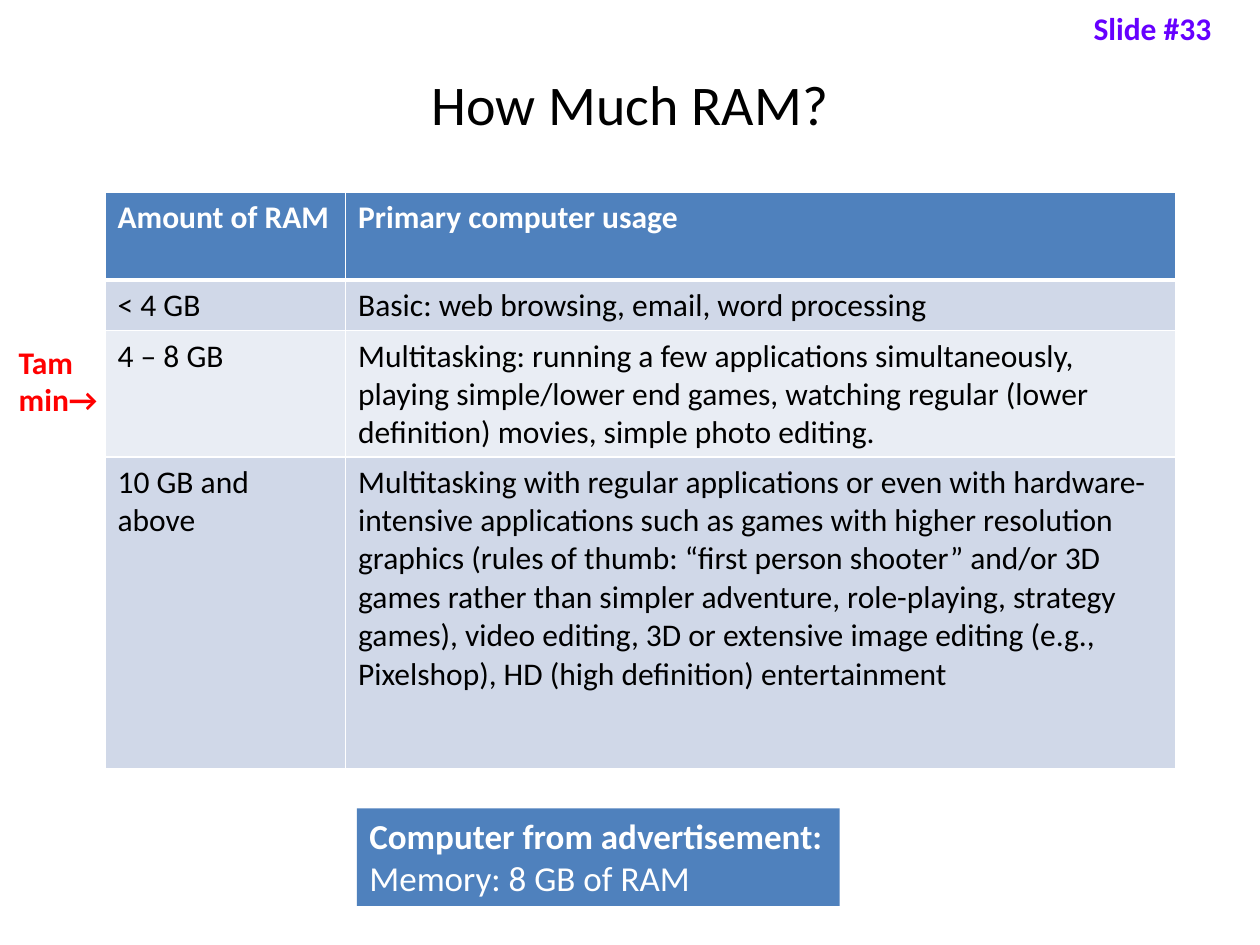
"""Build the slide on how much RAM a computer needs."""
from lxml import etree
from pptx import Presentation
from pptx.dml.color import RGBColor
from pptx.enum.shapes import MSO_SHAPE
from pptx.enum.text import MSO_ANCHOR, PP_ALIGN
from pptx.oxml.ns import qn
from pptx.util import Pt

RECT = MSO_SHAPE.RECTANGLE
MIDDLE = MSO_ANCHOR.MIDDLE
TOP = MSO_ANCHOR.TOP
LEFT = PP_ALIGN.LEFT
CENTER = PP_ALIGN.CENTER
BLUE, PALE, PALER = "4F81BD", "D0D8E8", "E9EDF4"
WHITE, BLACK = "FFFFFF", "000000"


def rgb(value):
    return RGBColor.from_string(value)


def write(tf, text, size, color, bold=False, align=LEFT):
    tf.text = text
    for p in tf.paragraphs:
        p.alignment = align
        for r in p.runs:
            r.font.name = "Calibri"
            r.font.size = Pt(size)
            r.font.bold = bold
            r.font.color.rgb = rgb(color)


prs = Presentation()
prs.slide_width, prs.slide_height = Pt(720), Pt(540)
s = prs.slides.add_slide(prs.slide_layouts[6])

labels = [
    ("Slide #33", (617.8, 1.5, 102.2, 29), 18, "6600FF", True, LEFT, TOP),
    ("How Much RAM?", (36, 21.6, 648, 74.2), 32, BLACK, False, CENTER, MIDDLE),
    ("Tam\nmin→", (3.6, 192.2, 102.2, 51), 18, "FF0000", True, LEFT, TOP),
]
for text, box, size, color, bold, align, anchor in labels:
    tf = s.shapes.add_textbox(*map(Pt, box)).text_frame
    tf.word_wrap = True
    tf.vertical_anchor = anchor
    write(tf, text, size, color, bold, align)

rows = [
    ("Amount of RAM", "Primary computer usage"),
    ("< 4 GB", "Basic: web browsing, email, word processing"),
    ("4 – 8 GB",
     "Multitasking: running a few applications simultaneously, playing "
     "simple/lower end games, watching regular (lower definition) movies, "
     "simple photo editing."),
    ("10 GB and above",
     "Multitasking with regular applications or even with hardware-intensive "
     "applications such as games with higher resolution graphics (rules of "
     "thumb: “first person shooter” and/or 3D games rather than simpler "
     "adventure, role-playing, strategy games), video editing, 3D or extensive "
     "image editing (e.g., Pixelshop), HD (high definition) entertainment"),
]
fills = [BLUE, PALE, PALER, PALE]
widths = [137.5, 474.5]
heights = [50, 29, 71.5, 178]
table = s.shapes.add_table(len(rows), len(widths), Pt(60), Pt(110),
                           Pt(sum(widths)), Pt(sum(heights))).table
for column, width in zip(table.columns, widths):
    column.width = Pt(width)
for i, (row, height) in enumerate(zip(table.rows, heights)):
    row.height = Pt(height)
    header = i == 0
    edges = {"a:lnL": 1, "a:lnR": 1, "a:lnT": 3 if i == 1 else 1,
             "a:lnB": 3 if header else 1}
    for cell, text in zip(row.cells, rows[i]):
        write(cell.text_frame, text, 18, WHITE if header else BLACK, header)
        tc_pr = cell._tc.get_or_add_tcPr()
        for tag, weight in edges.items():
            ln = etree.SubElement(tc_pr, qn(tag), w=str(Pt(weight)))
            fill = etree.SubElement(ln, qn("a:solidFill"))
            etree.SubElement(fill, qn("a:srgbClr"), val=WHITE)
        cell.fill.solid()
        cell.fill.fore_color.rgb = rgb(fills[i])

sp = s.shapes.add_shape(RECT, Pt(204), Pt(462), Pt(275.8), Pt(55.7))
sp.shadow.inherit = False
sp.fill.solid()
sp.fill.fore_color.rgb = rgb(BLUE)
sp.line.fill.background()
tf = sp.text_frame
tf.word_wrap = False
tf.vertical_anchor = TOP
write(tf, "Computer from advertisement:\nMemory: 8 GB of RAM", 20, WHITE)
tf.paragraphs[0].runs[0].font.bold = True

prs.save("out.pptx")
